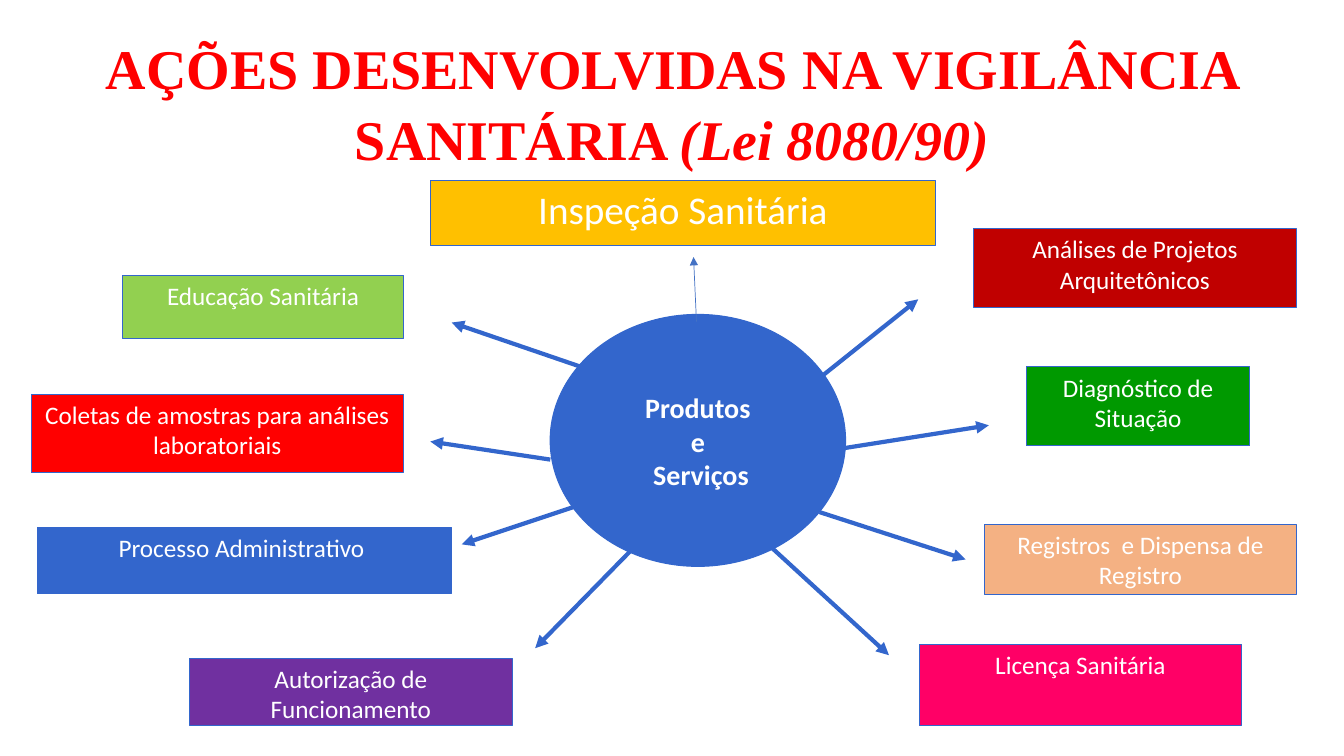
from dataclasses import dataclass

from pptx import Presentation
from pptx.dml.color import RGBColor
from pptx.enum.shapes import MSO_CONNECTOR, MSO_SHAPE
from pptx.enum.text import MSO_ANCHOR, PP_ALIGN
from pptx.oxml.ns import qn
from pptx.util import Pt
from lxml import etree

RECT, OVAL = MSO_SHAPE.RECTANGLE, MSO_SHAPE.OVAL
STRAIGHT = MSO_CONNECTOR.STRAIGHT
TOP = MSO_ANCHOR.TOP
CENTER = PP_ALIGN.CENTER


@dataclass(frozen=True)
class Theme:
    body_font: str = "Calibri"
    title_font: str = "Times New Roman"
    title_size: int = 40
    main_size: int = 28
    hub_size: int = 20
    box_size: int = 18
    white: str = "FFFFFF"
    red: str = "FF0000"
    blue: str = "3366CC"
    light_blue: str = "4472C4"
    amber: str = "FFC000"
    dark_red: str = "C00000"
    green: str = "009900"
    peach: str = "F4B183"
    pink: str = "FF0066"
    lime: str = "92D050"
    purple: str = "7030A0"


def rgb(value):
    return RGBColor.from_string(value)


def add_run(p, text, font, size, color, bold=False, italic=False):
    r = p.add_run()
    r.text = text
    r.font.name = font
    r.font.size = Pt(size)
    r.font.color.rgb = rgb(color)
    r.font.bold = bold
    r.font.italic = italic


class Board:
    def __init__(self, slide, theme):
        self.s = slide
        self.theme = theme

    def title(self, parts, x, y, w, h):
        t = self.theme
        tf = self.s.shapes.add_textbox(Pt(x), Pt(y), Pt(w), Pt(h)).text_frame
        tf.word_wrap = True
        p = tf.paragraphs[0]
        p.alignment = CENTER
        p.line_spacing = 1.06
        for text, italic in parts:
            add_run(p, text, t.title_font, t.title_size, t.red, bold=True, italic=italic)

    def shape(self, lines, x, y, w, h, fill, size, kind=RECT, bold=False, margin_top=3.6):
        t = self.theme
        sp = self.s.shapes.add_shape(kind, Pt(x), Pt(y), Pt(w), Pt(h))
        sp.shadow.inherit = False
        sp.fill.solid()
        sp.fill.fore_color.rgb = rgb(fill)
        sp.line.color.rgb = rgb(t.blue)
        sp.line.width = Pt(0.75)
        tf = sp.text_frame
        tf.word_wrap = True
        tf.vertical_anchor = TOP
        tf.margin_top = Pt(margin_top)
        for i, line in enumerate(lines):
            p = tf.add_paragraph() if i else tf.paragraphs[0]
            p.alignment = CENTER
            add_run(p, line, t.body_font, size, t.white, bold=bold)

    def arrow(self, x1, y1, x2, y2, color, width):
        c = self.s.shapes.add_connector(STRAIGHT, Pt(x1), Pt(y1), Pt(x2), Pt(y2))
        c.line.color.rgb = rgb(color)
        c.line.width = Pt(width)
        etree.SubElement(c.line._get_or_add_ln(), qn("a:tailEnd"), type="triangle")
        etree.SubElement(c._element.spPr, qn("a:effectLst"))


def main():
    prs = Presentation()
    prs.slide_width, prs.slide_height = Pt(960), Pt(540)
    t = Theme()
    board = Board(prs.slides.add_slide(prs.slide_layouts[6]), t)

    board.shape(["Produtos", "e", " Serviços"], 393, 224.6, 211, 180, t.blue,
                t.hub_size, kind=OVAL, bold=True, margin_top=28)
    board.shape(["Inspeção Sanitária"], 307.4, 128.9, 360.7, 46.8, t.amber, t.main_size)

    actions = [
        ("Análises de Projetos Arquitetônicos", 695.5, 163.4, 230.4, 56.2, t.dark_red),
        ("Diagnóstico de Situação", 733, 262.1, 159.8, 56.2, t.green),
        ("Registros  e Dispensa de Registro", 703.4, 374.4, 222.5, 50.4, t.peach),
        ("Licença Sanitária", 656.6, 460.1, 230.4, 58.3, t.pink),
        ("Educação Sanitária", 87.8, 196.6, 200.2, 45.4, t.lime),
        ("Coletas de amostras para análises laboratoriais", 22.3, 281.5, 265.7, 56.2, t.red),
        ("Processo Administrativo ", 26.6, 376.6, 295.9, 47.5, t.blue),
        ("Autorização de Funcionamento", 135.4, 470.2, 230.4, 48.2, t.purple),
    ]
    for text, x, y, w, h, fill in actions:
        board.shape([text], x, y, w, h, fill, t.box_size)

    arrows = [
        (548.6, 388.8, 635, 468),
        (585.4, 365.8, 689.8, 399.6),
        (601.2, 320.4, 706.3, 303.8),
        (585.4, 270, 655.9, 213.8),
        (427.7, 266.4, 322.6, 230.4),
        (393.1, 328.3, 307.4, 315.4),
        (416.2, 360, 329.8, 388.8),
        (455, 388.8, 382.3, 463),
    ]
    for ends in arrows:
        board.arrow(*ends, t.blue, 3)

    board.title([("AÇÕES DESENVOLVIDAS NA VIGILÂNCIA SANITÁRIA ", False),
                 ("(Lei 8080/90)", True)], 0, 17.3, 960, 104.4)
    board.arrow(497.5, 229.7, 495.4, 183.6, t.light_blue, 0.5)

    prs.save("out.pptx")


if __name__ == "__main__":
    main()
